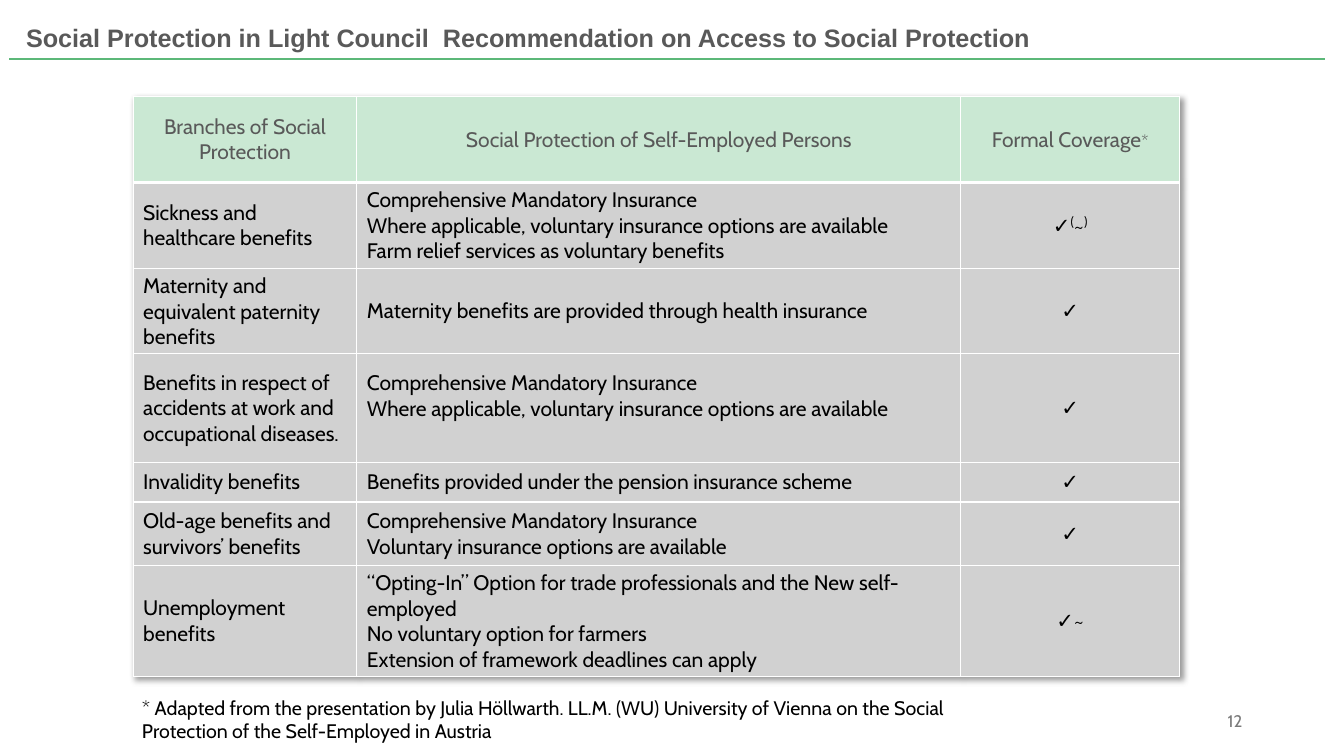
from lxml.etree import SubElement
from pptx import Presentation
from pptx.dml.color import RGBColor
from pptx.enum.text import MSO_ANCHOR, PP_ALIGN
from pptx.oxml import parse_xml
from pptx.oxml.ns import qn
from pptx.util import Inches, Pt

COLORS = {"heading": "595959", "rule": "5CB879", "header": "CAE8D3", "body": "D1D1D1",
          "text": "000000", "border": "FFFFFF", "number": "797979"}
DRAWING_NS = "http://schemas.openxmlformats.org/drawingml/2006/main"
COLUMN_WIDTHS = [2.22, 5.99, 2.17]
ROW_HEIGHTS = [0.85, 0.85, 0.84, 1.08, 0.39, 0.63, 1.08]
LINE_HEIGHT = 0.25
HEADERS = ["Branches of Social Protection", "Social Protection of Self-Employed Persons",
           "Formal Coverage"]
MANDATORY = "Comprehensive Mandatory Insurance"
VOLUNTARY = "Where applicable, voluntary insurance options are available"
CHECK = ("✓", 15, 0)
BRANCHES = [
    ("Sickness and healthcare benefits",
     [MANDATORY, VOLUNTARY, "Farm relief services as voluntary benefits"],
     [CHECK, ("(", 16, 30), ("~", 16, 0), (")", 16, 30)]),
    ("Maternity and equivalent paternity benefits",
     ["Maternity benefits are provided through health insurance"], [CHECK]),
    ("Benefits in respect of accidents at work and occupational diseases.",
     [MANDATORY, VOLUNTARY], [CHECK]),
    ("Invalidity benefits", ["Benefits provided under the pension insurance scheme"], [CHECK]),
    ("Old-age benefits and survivors’ benefits",
     [MANDATORY, "Voluntary insurance options are available"], [CHECK]),
    ("Unemployment benefits",
     ["“Opting-In” Option for trade professionals and the New self-employed",
      "No voluntary option for farmers", "Extension of framework deadlines can apply"],
     [CHECK, ("~", 16, 0)]),
]
ACCIDENTS_ROW = 3


def rgb(name):
    """Return the named colour."""
    return RGBColor.from_string(COLORS[name])


def write(frame, lines, color, align=PP_ALIGN.LEFT, font="Cabin", bold=False):
    """Fill a text frame with lines made of (text, size, baseline) runs."""
    for index, line in enumerate(lines):
        paragraph = frame.paragraphs[0] if index == 0 else frame.add_paragraph()
        paragraph.alignment = align
        for text, size, baseline in line:
            run = paragraph.add_run()
            run.text = text
            for key, value in {"name": font, "size": Pt(size), "bold": bold}.items():
                setattr(run.font, key, value)
            run.font.color.rgb = rgb(color)
            if baseline:
                run.font._element.set("baseline", str(baseline * 1000))


def add_label(slide, box, text, size, color, anchor=MSO_ANCHOR.TOP, **style):
    """Place one wrapped paragraph in the box."""
    frame = slide.shapes.add_textbox(*map(Inches, box)).text_frame
    frame.word_wrap = True
    frame.vertical_anchor = anchor
    write(frame, [[(text, size, 0)]], color, **style)


def add_title(slide, box):
    """Place the heading and the green rule below it."""
    left, top, width, height = box
    rule_top = top + height + 0.02
    rule = slide.shapes.add_connector(1, *map(Inches, (left - 0.07, rule_top, 13.14, rule_top)))
    rule.line.color.rgb = rgb("rule")
    rule.line.width = Pt(1.5)
    SubElement(rule._element.spPr, qn("a:effectLst"))
    add_label(slide, box,
              "Social Protection in Light Council  Recommendation on Access to Social Protection",
              18, "heading", MSO_ANCHOR.BOTTOM, font="Arial", bold=True)


def add_borders(cell, widths):
    """Draw white cell borders of the given widths in points."""
    properties = cell._tc.get_or_add_tcPr()
    for index, (side, width) in enumerate(widths.items()):
        properties.insert(index, parse_xml(
            f'<a:ln{side} xmlns:a="{DRAWING_NS}" w="{Pt(width)}"><a:solidFill>'
            f'<a:srgbClr val="{COLORS["border"]}"/></a:solidFill></a:ln{side}>'))


def style_cell(cell, is_header):
    """Set the fill, borders and anchor of a cell."""
    cell.vertical_anchor = MSO_ANCHOR.MIDDLE
    cell.fill.solid()
    cell.fill.fore_color.rgb = rgb("header" if is_header else "body")
    add_borders(cell, {"L": 1, "R": 1, "T": 1, "B": 3} if is_header
                else {"L": 1, "R": 1, "B": 1})


def add_coverage_table(slide, box):
    """Place the table of branches with its shadow."""
    table = slide.shapes.add_table(len(ROW_HEIGHTS), len(COLUMN_WIDTHS),
                                   *map(Inches, box)).table
    table._tbl.tblPr.insert(0, parse_xml(
        f'<a:effectLst xmlns:a="{DRAWING_NS}"><a:outerShdw blurRad="50800" dist="38100" '
        'dir="2700000" algn="tl" rotWithShape="0"><a:prstClr val="black">'
        '<a:alpha val="40000"/></a:prstClr></a:outerShdw></a:effectLst>'))
    for column, width in zip(table.columns, COLUMN_WIDTHS):
        column.width = Inches(width)
    for row, height in zip(table.rows, ROW_HEIGHTS):
        row.height = Inches(height)

    for index, header in enumerate(HEADERS):
        star = [("*", 12, 0)] if index == 2 else []
        write(table.cell(0, index).text_frame, [[(header, 15, 0)] + star], "heading",
              PP_ALIGN.CENTER)
    for row, (branch, protections, coverage) in enumerate(BRANCHES, 1):
        write(table.cell(row, 0).text_frame, [[(branch, 15, 0)]], "text")
        write(table.cell(row, 1).text_frame, [[(line, 15, 0)] for line in protections], "text")
        write(table.cell(row, 2).text_frame, [coverage], "text", PP_ALIGN.CENTER)
    for row in range(len(ROW_HEIGHTS)):
        for column in range(len(COLUMN_WIDTHS)):
            style_cell(table.cell(row, column), row == 0)
    table.cell(ACCIDENTS_ROW, 1).margin_bottom = Inches(0.05 + LINE_HEIGHT)


def main():
    """Build and save the slide."""
    deck = Presentation()
    deck.slide_width, deck.slide_height = Inches(13.33), Inches(7.5)
    slide = deck.slides.add_slide(deck.slide_layouts[6])
    add_title(slide, (0.16, 0.17, 10.53, 0.4))
    add_coverage_table(slide, (1.32, 0.96, sum(COLUMN_WIDTHS), sum(ROW_HEIGHTS)))
    add_label(slide, (1.31, 6.85, 8.73, 0.57),
              "* Adapted from the presentation by Julia Höllwarth. LL.M. (WU) University of "
              "Vienna on the Social Protection of the Self-Employed in Austria", 14, "text")
    add_label(slide, (9.42, 6.95, 3, 0.4), "12", 12, "number", MSO_ANCHOR.MIDDLE,
              align=PP_ALIGN.RIGHT)
    deck.save("out.pptx")


if __name__ == "__main__":
    main()
